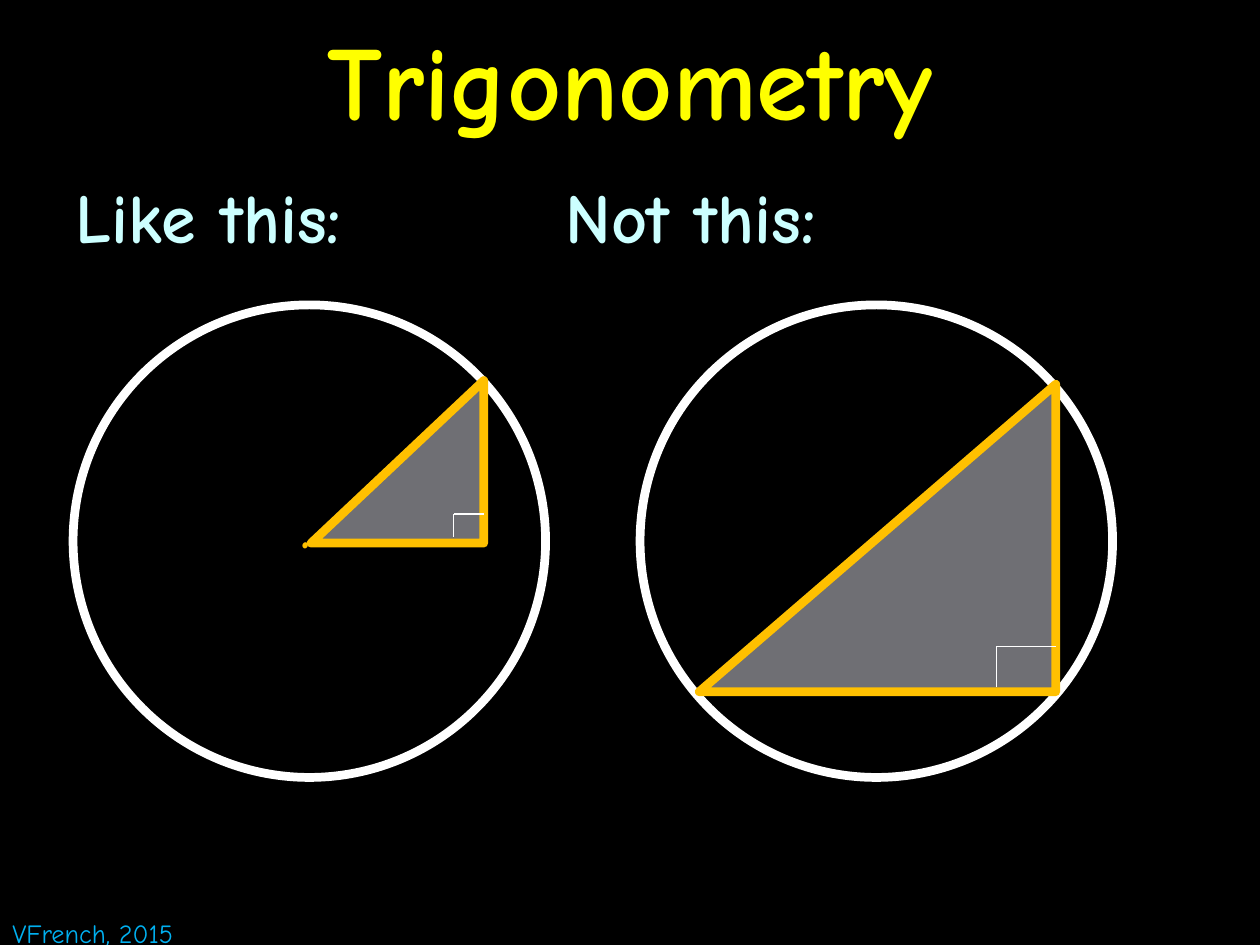
from dataclasses import dataclass

from lxml.etree import SubElement
from pptx import Presentation
from pptx.dml.color import RGBColor as Rgb
from pptx.enum.shapes import MSO_CONNECTOR as Conn, MSO_SHAPE as Form
from pptx.enum.text import MSO_ANCHOR as Anchor, MSO_AUTO_SIZE as Fit, PP_ALIGN as Align
from pptx.oxml.ns import qn
from pptx.util import Inches, Pt


@dataclass(frozen=True)
class Theme:
    """Colours, type sizes and line widths."""
    font: str = "Comic Neue"
    back: str = "000000"
    title: str = "FFFF00"
    head: str = "CCFFFF"
    white: str = "FFFFFF"
    gold: str = "FFC000"
    gray: str = "6F6F74"
    blue: str = "00B0F0"
    big: int = 60
    mid: int = 40
    small: int = 15
    thick: float = 5
    thin: float = 0.75


class Board:
    """Draws styled elements on the current slide."""

    def __init__(self, slide, theme):
        self.slide, self.theme = slide, theme
        fill = slide.background.fill
        fill.solid()
        fill.fore_color.rgb = Rgb.from_string(theme.back)

    def add_run(self, frame, text, size, color, bold=False):
        """Add one run to the first paragraph."""
        run = frame.paragraphs[0].add_run()
        run.text = text
        font = run.font
        font.name, font.size, font.bold = self.theme.font, Pt(size), bold
        font.color.rgb = Rgb.from_string(color)

    def title(self, text, *box):
        """Place and fill the title."""
        shape = self.slide.shapes.title
        shape.left, shape.top, shape.width, shape.height = map(Inches, box)
        frame = shape.text_frame
        frame.vertical_anchor = Anchor.MIDDLE
        frame.paragraphs[0].alignment = Align.CENTER
        self.add_run(frame, text, self.theme.big, self.theme.title, True)

    def text(self, text, size, color, *box, bold=False):
        """Add a one-line text box."""
        frame = self.slide.shapes.add_textbox(*map(Inches, box)).text_frame
        frame.word_wrap = False
        frame.auto_size = Fit.SHAPE_TO_FIT_TEXT
        self.add_run(frame, text, size, color, bold)

    def shape(self, form, color, *box, fill=None, flip=False):
        """Add an outlined shape."""
        shape = self.slide.shapes.add_shape(form, *map(Inches, box))
        shape.shadow.inherit = False
        shape.line.color.rgb = Rgb.from_string(color)
        shape.line.width = Pt(self.theme.thick)
        if fill:
            shape.fill.solid()
            shape.fill.fore_color.rgb = Rgb.from_string(fill)
        else:
            shape.fill.background()
        if flip:
            shape.element.spPr.find(qn("a:xfrm")).set("flipH", "1")

    def line(self, *ends):
        """Add a thin line."""
        line = self.slide.shapes.add_connector(Conn.STRAIGHT, *map(Inches, ends))
        line.line.color.rgb = Rgb.from_string(self.theme.white)
        line.line.width = Pt(self.theme.thin)
        SubElement(line.element.spPr, qn("a:effectLst"))

    def circle(self, left):
        """Add a large circle."""
        self.shape(Form.OVAL, self.theme.white, left, 2.42, 3.75, 3.75)

    def wedge(self, box, left, top, foot):
        """Add a right triangle with its corner mark."""
        self.shape(Form.RIGHT_TRIANGLE, self.theme.gold, *box,
                   fill=self.theme.gray, flip=True)
        self.line(box[0] + box[2], top, left, top)
        self.line(left, top, left, foot)


def main():
    """Build and save the slide."""
    deck = Presentation()
    deck.slide_width, deck.slide_height = Inches(10), Inches(7.5)
    theme = Theme()
    board = Board(deck.slides.add_slide(deck.slide_layouts[5]), theme)
    board.title("Trigonometry", 0, 0, 10, 1.25)
    for text, left in (("Like this:", 0.5), ("Not this:", 4.39)):
        board.text(text, theme.mid, theme.head, left, 1.33, 2.5, 0.77, bold=True)
    board.circle(0.58)
    board.text(".", theme.mid, theme.gold, 2.29, 3.75, 0.34, 0.77)
    board.wedge((2.47, 3.02, 1.37, 1.29), 3.6, 4.08, 4.26)
    board.circle(5.08)
    board.wedge((5.55, 3.05, 2.83, 2.44), 7.91, 5.13, 5.45)
    board.text("VFrench, 2015", theme.small, theme.blue, 0, 7.23, 1.69, 0.35)
    deck.save("out.pptx")


if __name__ == "__main__":
    main()
